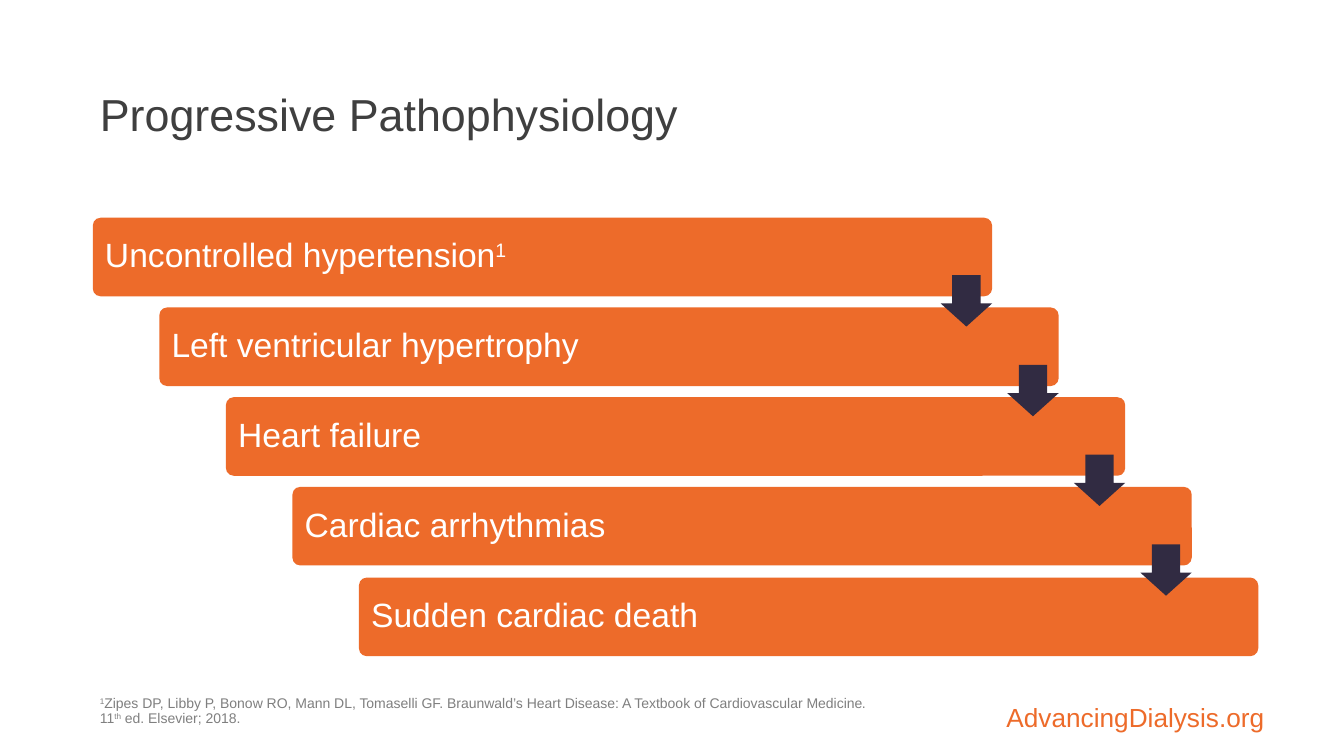
import pptx
import pptx.dml.color
import pptx.enum.shapes
import pptx.enum.text
import pptx.oxml
import pptx.oxml.ns
import pptx.util

SHAPES = pptx.enum.shapes.MSO_SHAPE
ANCHOR = pptx.enum.text.MSO_ANCHOR
ALIGN = pptx.enum.text.PP_ALIGN

EMU_PER_PX = 9144  # 100 px to the inch
ORANGE, NAVY, WHITE = "ED6B2A", "312B42", "FFFFFF"
DARK_GRAY, GRAY, MID_GRAY = "3F3F3F", "7F7F7F", "808080"


def px(length):
    return pptx.util.Emu(length * EMU_PER_PX)


def color(value):
    return pptx.dml.color.RGBColor.from_string(value)


class SlideBuilder:
    font_name = "Arial"

    def __init__(self, page):
        self.page = page

    def place(self, box, left, top, width, height):
        box.left, box.top = px(left), px(top)
        box.width, box.height = px(width), px(height)

    def add_text(self, box, spans, size, anchor, insets, align=ALIGN.LEFT, line_spacing=0.9):
        """Fill a box with one paragraph; each span is (text, colour, raised)."""
        frame = box.text_frame
        frame.word_wrap = True
        frame.auto_size = pptx.enum.text.MSO_AUTO_SIZE.NONE
        frame.vertical_anchor = anchor
        frame.margin_left = frame.margin_right = px(insets[0])
        frame.margin_top = frame.margin_bottom = px(insets[1])
        para = frame.paragraphs[0]
        para.alignment = align
        para.line_spacing = line_spacing
        para.space_before = pptx.util.Pt(0)
        for text, fill, raised in spans:
            span = para.add_run()
            span.text = text
            span.font.name = self.font_name
            span.font.size = pptx.util.Pt(size)
            span.font.color.rgb = color(fill)
            if raised:
                span.font._element.set("baseline", "30000")

    def title(self, text, bounds):
        box = self.page.shapes.title
        self.place(box, *bounds)
        self.add_text(box, [(text, DARK_GRAY, False)], 32, ANCHOR.MIDDLE, (7, 4), line_spacing=1.0)

    def body(self, spans, bounds):
        box = self.page.placeholders[1]
        self.place(box, *bounds)
        properties = box.text_frame.paragraphs[0]._p.get_or_add_pPr()
        properties.set("marL", "0")
        properties.set("indent", "0")
        properties.append(pptx.oxml.parse_xml(
            "<a:buNone %s/>" % pptx.oxml.ns.nsdecls("a")))
        self.add_text(box, spans, 10, ANCHOR.TOP, (7, 4))

    def label(self, text, bounds):
        box = self.page.shapes.add_textbox(*map(px, bounds))
        self.add_text(box, [(text, ORANGE, False)], 18.7, ANCHOR.BOTTOM, (11, 0), ALIGN.RIGHT)

    def shape(self, kind, fill, bounds, adjustments):
        box = self.page.shapes.add_shape(kind, *map(px, bounds))
        box.shadow.inherit = False
        box.fill.solid()
        box.fill.fore_color.rgb = color(fill)
        box.line.fill.background()
        for index, value in enumerate(adjustments):
            box.adjustments[index] = value
        return box

    def bar(self, spans, bounds):
        box = self.shape(SHAPES.ROUNDED_RECTANGLE, ORANGE, bounds, [0.1])
        self.add_text(box, spans, 24, ANCHOR.MIDDLE, (10, 10))

    def arrow(self, bounds):
        self.shape(SHAPES.DOWN_ARROW, NAVY, bounds, [0.55, 0.45])


def main():
    deck = pptx.Presentation()
    deck.slide_width, deck.slide_height = px(1333), px(750)
    builder = SlideBuilder(deck.slides.add_slide(deck.slide_layouts[1]))

    # Heading and site address
    builder.label("AdvancingDialysis.org", (812, 666, 453, 61))
    builder.title("Progressive Pathophysiology", (92, 40, 850, 145))

    # Staircase of disease stages
    stages = [
        [("Uncontrolled hypertension", WHITE, False), ("1", WHITE, True)],
        [("Left ventricular hypertrophy", WHITE, False)],
        [("Heart failure", WHITE, False)],
        [("Cardiac arrhythmias", WHITE, False)],
        [("Sudden cardiac death", WHITE, False)],
    ]
    bar_width, bar_height, arrow_size = 892, 78, 51
    corners = [(92 + 66 * step, 216 + 357 * step // 4) for step in range(len(stages))]
    for spans, (left, top) in zip(stages, corners):
        builder.bar(spans, (left, top, bar_width, bar_height))

    # Arrows flush with the right end of each bar but the last
    for left, top in corners[:-1]:
        builder.arrow((left + bar_width - arrow_size, top + 57, arrow_size, arrow_size))

    # Reference
    builder.body([
        ("1", GRAY, True),
        ("Zipes DP, Libby P, Bonow RO, Mann DL, Tomaselli GF. Braunwald’s Heart Disease: "
         "A Textbook of Cardiovascular Medicine", GRAY, False),
        (". 11", MID_GRAY, False),
        ("th", MID_GRAY, True),
        (" ed. ", MID_GRAY, False),
        ("Elsevier; 2018.", GRAY, False),
    ], (92, 687, 785, 31))

    deck.save("out.pptx")


if __name__ == "__main__":
    main()
